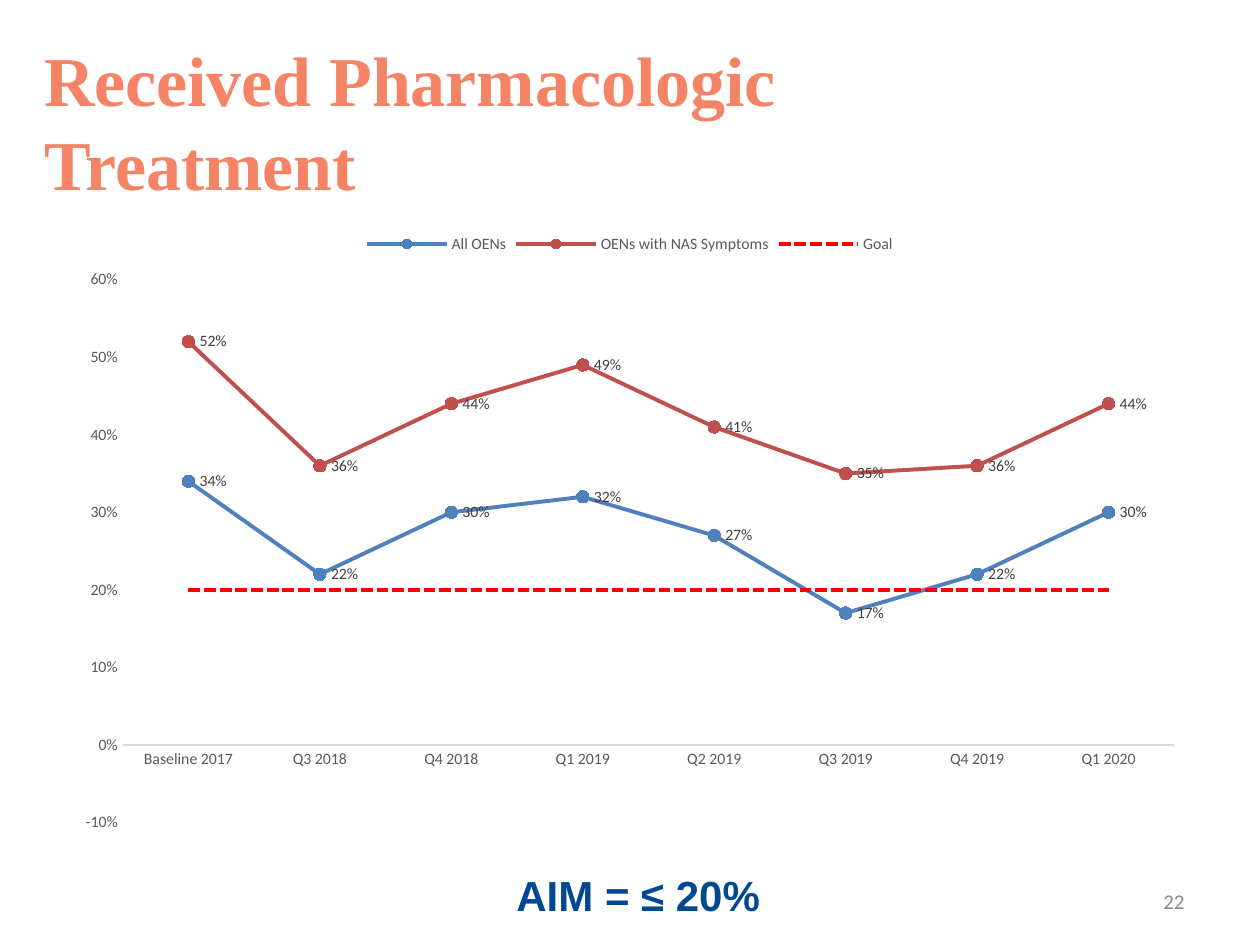
from pptx import Presentation
from pptx.chart.data import CategoryChartData
from pptx.dml.color import RGBColor
from pptx.enum import chart as charts, dml, text
from pptx.util import Pt

CORAL = RGBColor(0xF5, 0x84, 0x66)
NAVY = RGBColor(0x00, 0x49, 0x90)
PAGE_GRAY = RGBColor(0x89, 0x89, 0x89)
AXIS_GRAY = RGBColor(0x59, 0x59, 0x59)
LABEL_GRAY = RGBColor(0x40, 0x40, 0x40)
LINE_GRAY = RGBColor(0xD9, 0xD9, 0xD9)
BLUE = RGBColor(0x4F, 0x81, 0xBD)
BRICK = RGBColor(0xC0, 0x50, 0x4D)
RED = RGBColor(0xFF, 0x00, 0x00)

QUARTERS = ["Baseline 2017", "Q3 2018", "Q4 2018", "Q1 2019",
            "Q2 2019", "Q3 2019", "Q4 2019", "Q1 2020"]
GOAL = "Goal"
SERIES = [
    ("All OENs", BLUE, [0.34, 0.22, 0.30, 0.32, 0.27, 0.17, 0.22, 0.30]),
    ("OENs with NAS Symptoms", BRICK, [0.52, 0.36, 0.44, 0.49, 0.41, 0.35, 0.36, 0.44]),
    (GOAL, RED, [0.20] * len(QUARTERS)),
]


def set_attributes(target, **values):
    for name, value in values.items():
        setattr(target, name, value)


def format_font(font, name, size, color, bold=False):
    set_attributes(font, name=name, size=Pt(size), bold=bold)
    font.color.rgb = color


def place(shape, box):
    for name, value in zip(("left", "top", "width", "height"), box):
        setattr(shape, name, Pt(value))


def fill_text(shape, wording, alignment, anchor, **font):
    frame = shape.text_frame
    set_attributes(frame, text=wording, word_wrap=True, vertical_anchor=anchor,
                   auto_size=text.MSO_AUTO_SIZE.NONE)
    paragraph = frame.paragraphs[0]
    paragraph.alignment = alignment
    format_font(paragraph.runs[0].font, **font)


def add_title(slide, box):
    title = slide.shapes.title
    place(title, box)
    fill_text(title, "Received Pharmacologic Treatment", text.PP_ALIGN.LEFT,
              text.MSO_ANCHOR.MIDDLE, name="Times New Roman", size=40, color=CORAL, bold=True)


def add_label(slide, box, *content, **font):
    shape = slide.shapes.add_textbox(*map(Pt, box))
    fill_text(shape, *content, **font)


def format_series(series, color):
    series.smooth = False
    series.format.line.color.rgb = color
    series.format.line.width = Pt(2.25)
    if series.name == GOAL:
        series.format.line.dash_style = dml.MSO_LINE.SQUARE_DOT
        series.marker.style = charts.XL_MARKER_STYLE.NONE
        return
    set_attributes(series.marker, style=charts.XL_MARKER_STYLE.CIRCLE, size=7)
    series.marker.format.fill.solid()
    series.marker.format.fill.fore_color.rgb = color
    series.marker.format.line.color.rgb = color
    labels = series.data_labels
    set_attributes(labels, show_value=True, number_format="0%", number_format_is_linked=False,
                   position=charts.XL_LABEL_POSITION.RIGHT)
    format_font(labels.font, "Calibri", 9, LABEL_GRAY)


def format_axes(chart):
    for axis in (chart.category_axis, chart.value_axis):
        set_attributes(axis, has_major_gridlines=False,
                       major_tick_mark=charts.XL_TICK_MARK.NONE,
                       minor_tick_mark=charts.XL_TICK_MARK.NONE)
        format_font(axis.tick_labels.font, "Calibri", 9, AXIS_GRAY)
    category_line = chart.category_axis.format.line
    category_line.color.rgb = LINE_GRAY
    category_line.width = Pt(0.75)
    set_attributes(chart.value_axis, minimum_scale=-0.1, maximum_scale=0.6, major_unit=0.1)
    set_attributes(chart.value_axis.tick_labels, number_format="0%",
                   number_format_is_linked=False)
    chart.value_axis.format.line.fill.background()


def add_treatment_chart(slide, box):
    data = CategoryChartData(number_format="0%")
    data.categories = QUARTERS
    for name, _, values in SERIES:
        data.add_series(name, values)
    chart = slide.shapes.add_chart(charts.XL_CHART_TYPE.LINE_MARKERS, *map(Pt, box), data).chart
    set_attributes(chart, has_title=False, has_legend=True)
    format_font(chart.font, "Calibri", 10, RGBColor(0, 0, 0))
    set_attributes(chart.legend, position=charts.XL_LEGEND_POSITION.TOP, include_in_layout=False)
    format_font(chart.legend.font, "Calibri", 9, AXIS_GRAY)
    format_axes(chart)
    plot = chart.plots[0]
    plot.vary_by_categories = False
    for series, (_, color, _) in zip(plot.series, SERIES):
        format_series(series, color)


def main():
    presentation = Presentation()
    set_attributes(presentation, slide_width=Pt(720), slide_height=Pt(540))
    slide = presentation.slides.add_slide(presentation.slide_layouts[5])
    add_title(slide, (18, 24, 570, 90))
    add_treatment_chart(slide, (36, 126, 648, 356.4))
    add_label(slide, (288, 493.2, 177, 36), "AIM = ≤ 20%", text.PP_ALIGN.LEFT,
              text.MSO_ANCHOR.TOP, name="Arial", size=24, color=NAVY, bold=True)
    add_label(slide, (516, 500.4, 168, 28.8), "22", text.PP_ALIGN.RIGHT,
              text.MSO_ANCHOR.MIDDLE, name="Calibri", size=12, color=PAGE_GRAY)
    presentation.save("out.pptx")


if __name__ == "__main__":
    main()
